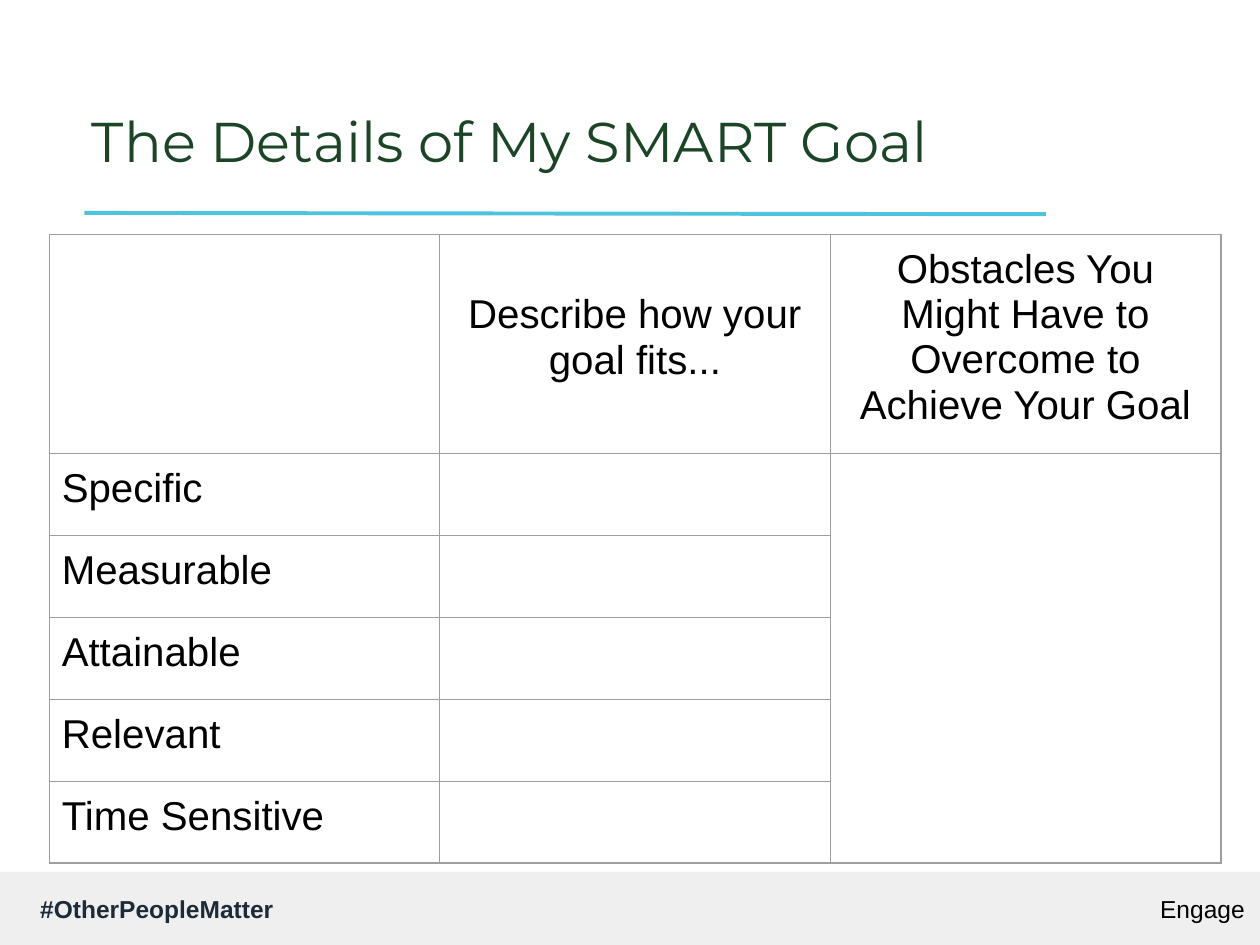
import pptx
import pptx.util
import pptx.dml.color
import pptx.enum.shapes
import pptx.enum.text
import pptx.oxml
import pptx.oxml.ns
from lxml import etree

Inches, Pt = pptx.util.Inches, pptx.util.Pt
ALIGN = pptx.enum.text.PP_ALIGN
MIDDLE = pptx.enum.text.MSO_ANCHOR.MIDDLE

# Content
TITLE = "The Details of My SMART Goal"
HASHTAG = "#OtherPeopleMatter"
SECTION = "Engage"
HEADERS = ["", "Describe how your goal fits...",
           "Obstacles You Might Have to Overcome to Achieve Your Goal"]
CRITERIA = ["Specific", "Measurable", "Attainable", "Relevant", "Time Sensitive"]

COLORS = {"title": "1A4625", "rule": "4EC3E0", "footer": "EFEFEF",
          "hashtag": "1C2B39", "text": "000000", "border": "9E9E9E"}
COL_W, HEADER_H, ROW_H = 3.1, 1.74, 0.65
FOOTER_TOP, FOOTER_H = 6.92, 0.58
PAD = 0.1


def rgb(name):
    return pptx.dml.color.RGBColor.from_string(COLORS[name])


def write(tf, text, size, color, font="Arial", align=ALIGN.LEFT, bold=False):
    p = tf.paragraphs[0]
    p.alignment = align
    r = p.add_run()
    r.text = text
    for key, value in {"name": font, "size": Pt(size), "bold": bold}.items():
        setattr(r.font, key, value)
    r.font.color.rgb = rgb(color)


def frame(tf, pad):
    margins = {f"margin_{side}": Inches(pad) for side in ("left", "top", "right", "bottom")}
    for key, value in {"word_wrap": True, "vertical_anchor": MIDDLE, **margins}.items():
        setattr(tf, key, value)
    return tf


def add_text(left, width, pad, *args, **kwargs):
    sp = s.shapes.add_textbox(Inches(left), Inches(FOOTER_TOP), Inches(width), Inches(FOOTER_H))
    write(frame(sp.text_frame, pad), *args, **kwargs)


def style_cell(cell):
    cell.fill.background()
    for side in ("left", "top", "right", "bottom"):
        setattr(cell, f"margin_{side}", Inches(PAD))
    tcPr = cell._tc.get_or_add_tcPr()
    for i, tag in enumerate(("lnL", "lnR", "lnT", "lnB")):
        tcPr.insert(i, pptx.oxml.parse_xml(
            f'<a:{tag} {pptx.oxml.ns.nsdecls("a")} w="{Pt(0.75)}"><a:solidFill>'
            f'<a:srgbClr val="{COLORS["border"]}"/></a:solidFill></a:{tag}>'))


prs = pptx.Presentation()
prs.slide_width, prs.slide_height = Inches(10), Inches(7.5)
s = prs.slides.add_slide(prs.slide_layouts[5])

# Footer band
sp = s.shapes.add_shape(pptx.enum.shapes.MSO_SHAPE.RECTANGLE, 0, Inches(FOOTER_TOP),
                        prs.slide_width, Inches(FOOTER_H))
sp.shadow.inherit = False
sp.fill.solid()
sp.fill.fore_color.rgb = rgb("footer")
sp.line.fill.background()
add_text(0.22, 2.05, PAD, HASHTAG, 14, "hashtag", bold=True)
add_text(8.65, 1.23, 0, SECTION, 14, "text", align=ALIGN.RIGHT)

# Title and the rule under it
title = s.shapes.title
title.left, title.top, title.width, title.height = map(Inches, (0.63, 0.64, 7.84, 0.94))
write(frame(title.text_frame, PAD), TITLE, 32, "title", font="Montserrat")
rule = s.shapes.add_connector(pptx.enum.shapes.MSO_CONNECTOR.STRAIGHT,
                              *map(Inches, (0.67, 1.69, 8.3, 1.7)))
rule.line.color.rgb = rgb("rule")
rule.line.width = Pt(2.25)
etree.SubElement(rule._element.spPr, pptx.oxml.ns.qn("a:effectLst"))

# Goal table
n_rows, n_cols = len(CRITERIA) + 1, len(HEADERS)
table = s.shapes.add_table(n_rows, n_cols, Inches(0.39), Inches(1.86), Inches(COL_W * n_cols),
                           Inches(HEADER_H + ROW_H * len(CRITERIA))).table
table.first_row = table.horz_banding = False
for col in table.columns:
    col.width = Inches(COL_W)
for i, row in enumerate(table.rows):
    row.height = Inches(ROW_H if i else HEADER_H)
for cell in table.iter_cells():
    style_cell(cell)
for j, text in enumerate(HEADERS):
    if text:
        write(table.cell(0, j).text_frame, text, 23, "text", align=ALIGN.CENTER)
table.cell(0, 1).margin_top = Inches(0.46)  # one line lower than its neighbour
for i, text in enumerate(CRITERIA, 1):
    write(table.cell(i, 0).text_frame, text, 23, "text")
table.cell(1, 2).merge(table.cell(n_rows - 1, 2))

prs.save("out.pptx")
